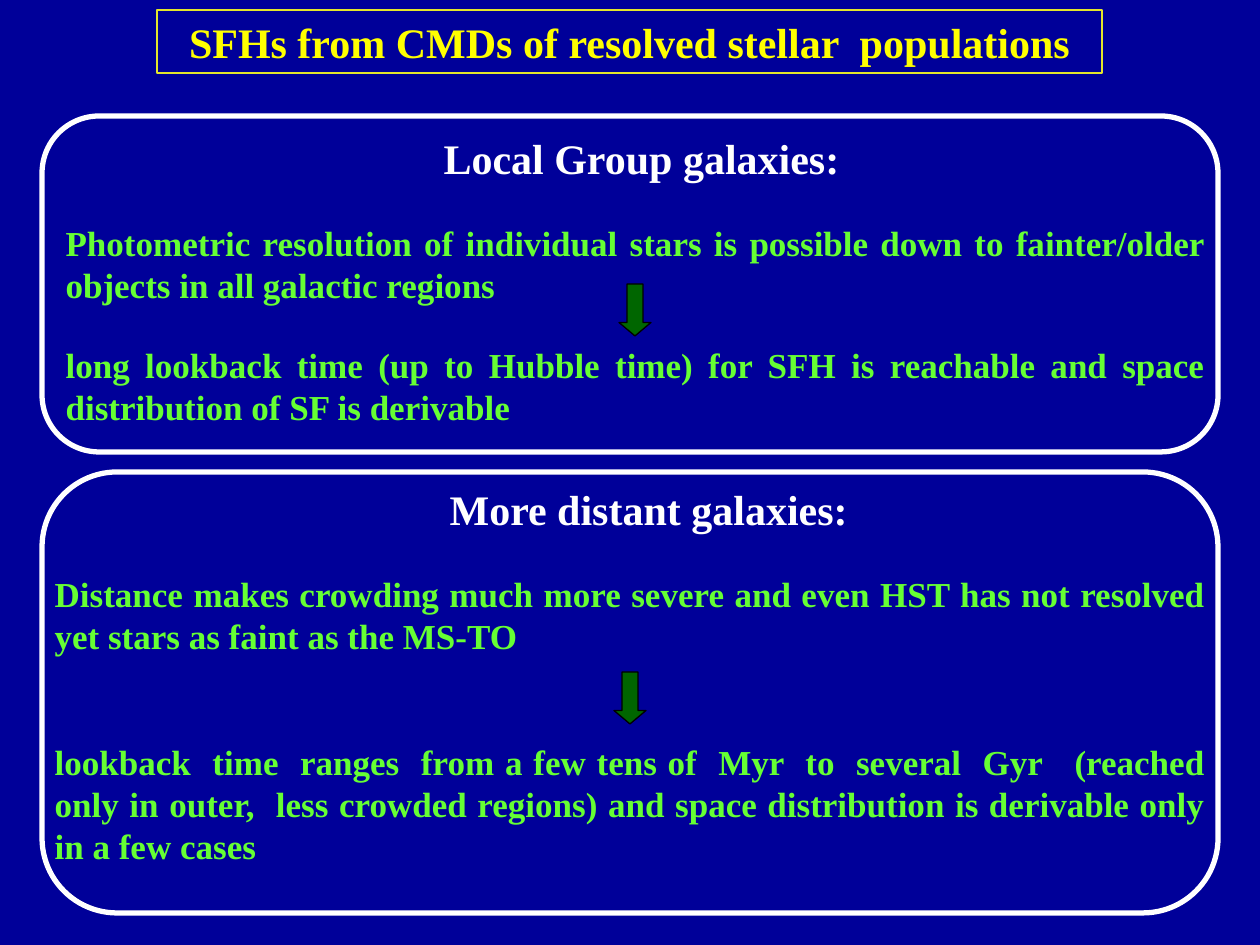
from dataclasses import dataclass

from pptx import Presentation
from pptx.dml.color import RGBColor
from pptx.enum.shapes import MSO_SHAPE
from pptx.enum.text import MSO_ANCHOR, MSO_AUTO_SIZE, PP_ALIGN
from pptx.oxml.xmlchemy import OxmlElement
from pptx.shapes.autoshape import Shape
from pptx.slide import Slide
from pptx.util import Emu, Pt

NAVY = RGBColor(0x00, 0x00, 0x99)
YELLOW = RGBColor(0xFF, 0xFF, 0x00)
GOLD = RGBColor(0xE4, 0xE6, 0x2C)
WHITE = RGBColor(0xFF, 0xFF, 0xFF)
LIME = RGBColor(0x66, 0xFF, 0x33)
GREEN = RGBColor(0x00, 0x66, 0x00)
BLACK = RGBColor(0x00, 0x00, 0x00)
FONT = "Times New Roman"
SCALE = 914400 / 126


@dataclass
class Box:
    left: int
    top: int
    width: int
    height: int


@dataclass
class Line:
    text: str
    size: int
    color: RGBColor
    align: PP_ALIGN
    gap: int = 0
    indent: int = 0


@dataclass
class Panel:
    frame: Box
    body: Box
    arrow: Box
    lines: list[Line]


def px(count: int) -> Emu:
    return Emu(round(count * SCALE))


def place(shape: Shape, box: Box) -> None:
    shape.left, shape.top = px(box.left), px(box.top)
    shape.width, shape.height = px(box.width), px(box.height)


def write(shape: Shape, lines: list[Line], anchor: MSO_ANCHOR) -> None:
    frame = shape.text_frame
    frame.text = "\n".join(line.text for line in lines)
    frame.word_wrap = True
    frame.auto_size = MSO_AUTO_SIZE.NONE
    frame.vertical_anchor = anchor
    for para, line in zip(frame.paragraphs, lines):
        para.alignment = line.align
        para.space_before = Pt(line.gap)
        para.space_after = Pt(0)
        props = para._p.get_or_add_pPr()
        props.set("marL", str(px(line.indent)))
        props.set("indent", "0")
        props.append(OxmlElement("a:buNone"))
        font = para.runs[0].font
        font.name, font.size, font.bold = FONT, Pt(line.size), True
        font.color.rgb = line.color


def draw(slide: Slide, kind: MSO_SHAPE, box: Box, color: RGBColor, width: float) -> Shape:
    shape = slide.shapes.add_shape(
        kind, px(box.left), px(box.top), px(box.width), px(box.height)
    )
    shape.shadow.inherit = False
    shape.fill.background()
    shape.line.color.rgb = color
    shape.line.width = Pt(width)
    return shape


def add_panel(slide: Slide, holder: Shape, panel: Panel) -> None:
    place(holder, panel.body)
    write(holder, panel.lines, MSO_ANCHOR.TOP)
    frame = draw(slide, MSO_SHAPE.ROUNDED_RECTANGLE, panel.frame, WHITE, 3)
    frame.adjustments[0] = 0.17
    arrow = draw(slide, MSO_SHAPE.DOWN_ARROW, panel.arrow, BLACK, 0.75)
    arrow.adjustments[0], arrow.adjustments[1] = 0.5, 0.42
    arrow.fill.solid()
    arrow.fill.fore_color.rgb = GREEN


def head(text: str, indent: int) -> Line:
    return Line(text, 24, WHITE, PP_ALIGN.LEFT, 0, indent)


def point(text: str, gap: int) -> Line:
    return Line(text, 20, LIME, PP_ALIGN.JUSTIFY, gap)


PANELS = [
    Panel(
        Box(42, 116, 1176, 336),
        Box(53, 126, 1165, 348),
        Box(619, 284, 32, 52),
        [
            head("Local Group galaxies:", 378),
            point(
                "Photometric resolution of individual stars is possible down to "
                "fainter/older objects in all galactic regions", 22,
            ),
            point(
                "long lookback time (up to Hubble time) for SFH is reachable and "
                "space distribution of SF is derivable", 22,
            ),
        ],
    ),
    Panel(
        Box(42, 472, 1176, 441),
        Box(42, 477, 1176, 398),
        Box(614, 672, 32, 52),
        [
            head("More distant galaxies:", 395),
            point(
                "Distance makes crowding much more severe and even HST has not "
                "resolved yet stars as faint as the MS-TO", 22,
            ),
            point(
                "lookback  time  ranges  from a few tens of  Myr  to  several  Gyr   "
                "(reached only in outer,  less crowded regions) and space "
                "distribution is derivable only in a few cases", 48,
            ),
        ],
    ),
]


def main() -> None:
    deck = Presentation()
    deck.slide_width, deck.slide_height = px(1260), px(945)
    slide = deck.slides.add_slide(deck.slide_layouts[3])
    slide.background.fill.solid()
    slide.background.fill.fore_color.rgb = NAVY

    title = slide.shapes.title
    place(title, Box(157, 10, 945, 63))
    title.fill.solid()
    title.fill.fore_color.rgb = NAVY
    title.line.color.rgb = GOLD
    title.line.width = Pt(0.75)
    text = "SFHs from CMDs of resolved stellar  populations"
    write(title, [Line(text, 24, YELLOW, PP_ALIGN.CENTER)], MSO_ANCHOR.MIDDLE)

    for holder, panel in zip(list(slide.placeholders)[1:], PANELS):
        add_panel(slide, holder, panel)
    deck.save("out.pptx")


if __name__ == "__main__":
    main()
